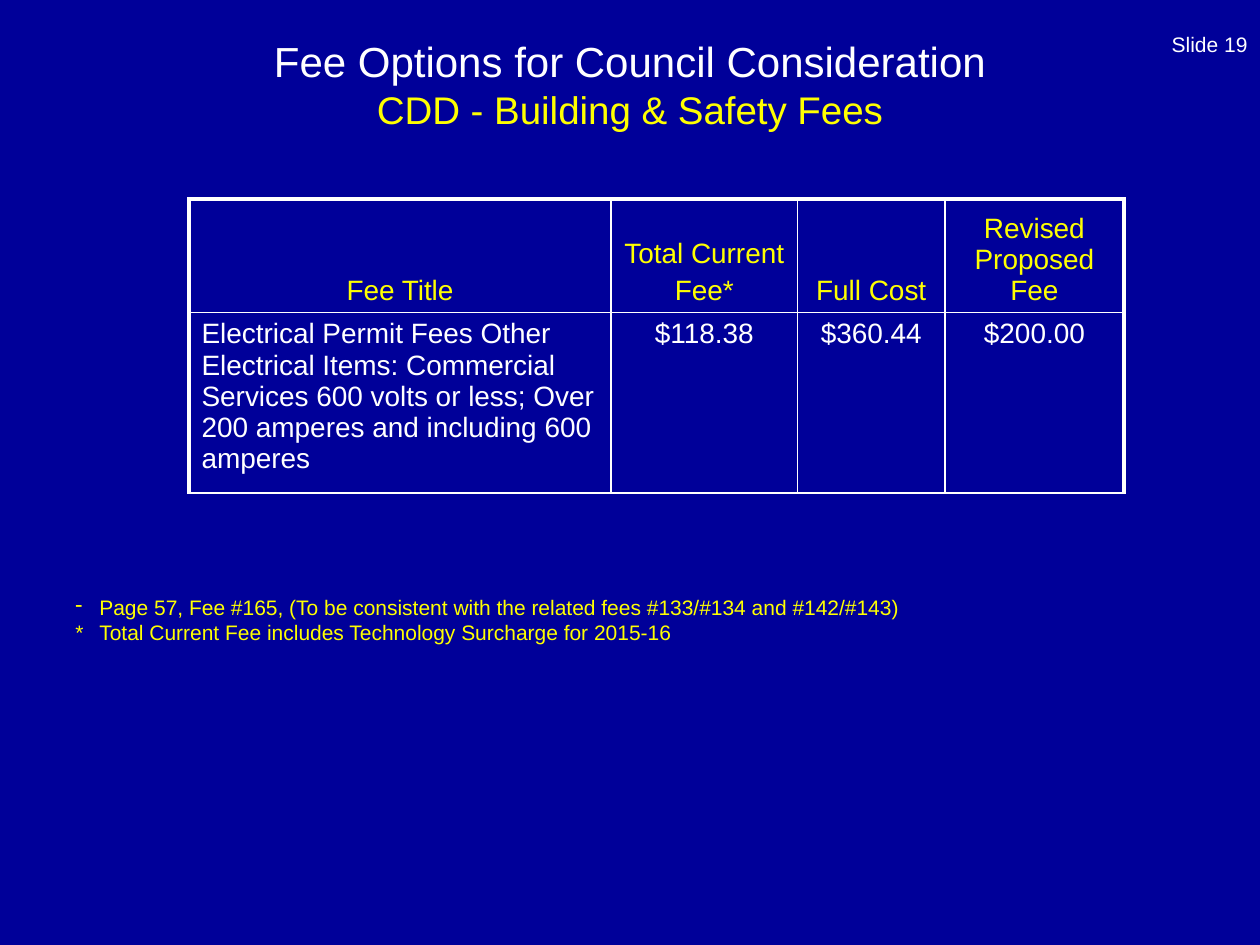
from dataclasses import dataclass

from lxml import etree
from pptx import Presentation
from pptx.dml.color import RGBColor
from pptx.enum.text import MSO_ANCHOR, PP_ALIGN
from pptx.oxml.ns import qn
from pptx.util import Inches, Pt

LEFT, CENTER, RIGHT = PP_ALIGN.LEFT, PP_ALIGN.CENTER, PP_ALIGN.RIGHT
TOP, MIDDLE, BOTTOM = MSO_ANCHOR.TOP, MSO_ANCHOR.MIDDLE, MSO_ANCHOR.BOTTOM


@dataclass(frozen=True)
class Theme:
    font: str = "Arial"
    background: str = "000099"
    white: str = "FFFFFF"
    yellow: str = "FFFF00"
    title: int = 24
    subtitle: int = 22
    table: int = 16
    small: int = 12
    outer_line: float = 2.25
    inner_line: float = 1


THEME = Theme()
COL_WIDTHS = [3.35, 1.48, 1.17, 1.42]
ROW_HEIGHTS = [0.84, 1.33]
HEADERS = ["Fee Title", "Total Current\nFee*", "Full Cost", "Revised Proposed Fee"]
FEE_ROW = [
    "Electrical Permit Fees Other Electrical Items: Commercial Services "
    "600 volts or less; Over 200 amperes and including 600 amperes",
    "$118.38", "$360.44", "$200.00",
]
NOTES = [
    "Page 57, Fee #165, (To be consistent with the related fees #133/#134 and #142/#143)",
    "*\tTotal Current Fee includes Technology Surcharge for 2015-16",
]


def style_paragraph(p, size, color, align=LEFT):
    p.alignment = align
    for r in p.runs:
        r.font.name = THEME.font
        r.font.size = Pt(size)
        r.font.color.rgb = RGBColor.from_string(color)


def add_text(slide, box, lines, anchor, align):
    sp = slide.shapes.add_textbox(*map(Inches, box))
    tf = sp.text_frame
    tf.word_wrap = True
    tf.vertical_anchor = anchor
    tf.text = "\n".join(text for text, _, _ in lines)
    for p, (_, size, color) in zip(tf.paragraphs, lines):
        style_paragraph(p, size, color, align)
    return tf


def hang_paragraph(p, indent, bullet=None):
    pPr = p._p.get_or_add_pPr()
    pPr.set("marL", str(Inches(indent)))
    pPr.set("indent", str(-Inches(indent)))
    if bullet:
        etree.SubElement(pPr, qn("a:buChar"), char=bullet)


def set_borders(cell, widths):
    tcPr = cell._tc.get_or_add_tcPr()
    for side, width in widths.items():
        ln = etree.SubElement(tcPr, qn(f"a:ln{side}"), w=str(Pt(width)))
        fill = etree.SubElement(ln, qn("a:solidFill"))
        etree.SubElement(fill, qn("a:srgbClr"), val=THEME.white)


def fill_cell(cell, text, color, align, anchor):
    cell.fill.background()
    cell.vertical_anchor = anchor
    cell.text = text
    for i, p in enumerate(cell.text_frame.paragraphs):
        style_paragraph(p, THEME.table, color, align)
        if i:
            p.space_before = Pt(0.2 * THEME.table)


def add_fee_table(slide, left, top):
    size = (sum(COL_WIDTHS), sum(ROW_HEIGHTS))
    frame = slide.shapes.add_table(
        len(ROW_HEIGHTS), len(COL_WIDTHS), *map(Inches, (left, top, *size)))
    table = frame.table
    for col, width in zip(table.columns, COL_WIDTHS):
        col.width = Inches(width)
    for row, height in zip(table.rows, ROW_HEIGHTS):
        row.height = Inches(height)
    outer, inner = THEME.outer_line, THEME.inner_line
    last = len(COL_WIDTHS) - 1
    for r, texts in enumerate([HEADERS, FEE_ROW]):
        header = r == 0
        for c, text in enumerate(texts):
            cell = table.cell(r, c)
            set_borders(cell, {
                "L": outer if c == 0 else inner,
                "R": outer if c == last else inner,
                "T": outer if header else inner,
                "B": inner,
            })
            fill_cell(cell, text,
                      THEME.yellow if header else THEME.white,
                      CENTER if header or c else LEFT,
                      BOTTOM if header else TOP)


def main():
    prs = Presentation()
    prs.slide_width, prs.slide_height = Inches(10), Inches(7.5)
    slide = prs.slides.add_slide(prs.slide_layouts[6])
    fill = slide.background.fill
    fill.solid()
    fill.fore_color.rgb = RGBColor.from_string(THEME.background)

    add_text(slide, (7.67, 0, 2.33, 0.5),
             [("Slide 19", THEME.small, THEME.white)], BOTTOM, RIGHT)
    add_text(slide, (0.5, 0, 9, 1.33),
             [("Fee Options for Council Consideration", THEME.title, THEME.white),
              ("CDD - Building & Safety Fees", THEME.subtitle, THEME.yellow)],
             MIDDLE, CENTER)
    add_fee_table(slide, 1.5, 1.58)
    tf = add_text(slide, (0.5, 4.67, 7.58, 0.5),
                  [(note, THEME.small, THEME.yellow) for note in NOTES], TOP, LEFT)
    for p, bullet in zip(tf.paragraphs, ["-", None]):
        hang_paragraph(p, 0.19, bullet)
    prs.save("out.pptx")


if __name__ == "__main__":
    main()
